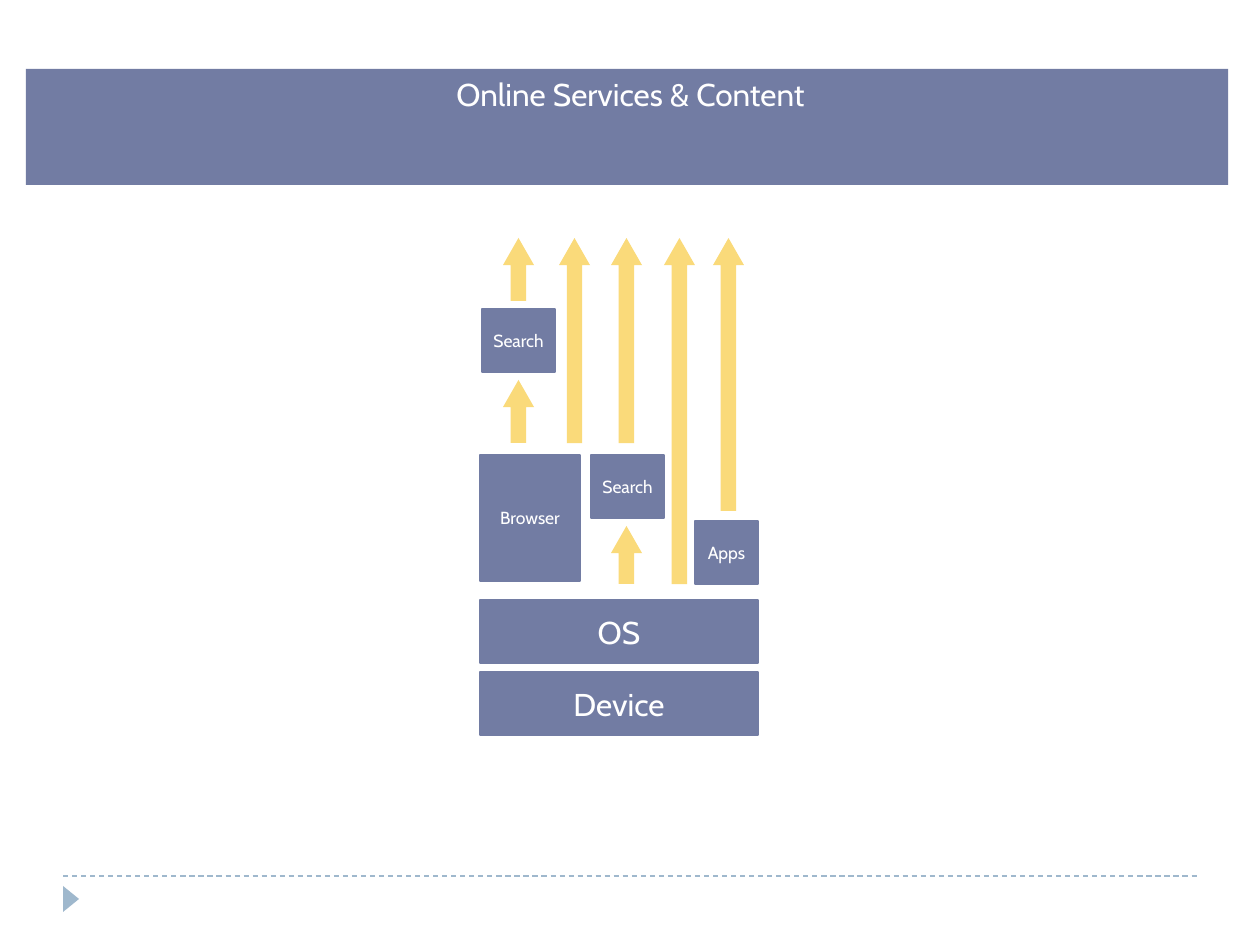
from pptx import Presentation
from pptx.dml.color import RGBColor
from pptx.enum.dml import MSO_LINE
from pptx.enum.shapes import MSO_CONNECTOR, MSO_SHAPE as Kind
from pptx.enum.text import MSO_ANCHOR, MSO_AUTO_SIZE, PP_ALIGN
from pptx.oxml.ns import qn
from pptx.util import Pt
from lxml.etree import SubElement

PX = 914400 / 126
FONT = "Cabin"
HUES = {"slate": "727CA3", "gold": "FADA7A", "sky": "9FB8CD", "white": "FFFFFF"}

TITLE = "Online Services & Content"
BANNER = (26, 69, 1202, 116)
HEAD = (368, 69, 525, 50)
LAYERS = [("Device", 672), ("OS", 600)]
BOXES = [
    ("Apps", 695, 521, 63, 63),
    ("Search", 591, 455, 73, 63),
    ("Browser", 480, 455, 100, 126),
    ("Search", 482, 309, 73, 63),
]
TOP = 238
ARROWS = [
    (503, TOP, 301),
    (503, 380, 443),
    (559, TOP, 443),
    (611, TOP, 443),
    (611, 526, 584),
    (664, TOP, 584),
    (713, TOP, 511),
]


def emu(*vals):
    return [round(v * PX) for v in vals]


def hue(name):
    return RGBColor.from_string(HUES[name])


def draw(kind, rect, fill, adj):
    shape = slide.shapes.add_shape(kind, *emu(*rect))
    shape.shadow.inherit = False
    shape.fill.solid()
    shape.fill.fore_color.rgb = hue(fill)
    shape.line.fill.background()
    for i, val in enumerate(adj):
        shape.adjustments[i] = val
    return shape


def write(shape, text, size):
    para = shape.text_frame.paragraphs[0]
    para.text = text
    para.alignment = PP_ALIGN.CENTER
    para.font.name = FONT
    para.font.size = Pt(size)
    para.font.color.rgb = hue("white")


def block(text, rect, size):
    shape = draw(Kind.ROUNDED_RECTANGLE, rect, "slate", [0])
    shape.line.color.rgb = hue("slate")
    shape.line.width = Pt(1.5)
    frame = shape.text_frame
    frame.word_wrap = True
    frame.vertical_anchor = MSO_ANCHOR.MIDDLE
    frame.margin_left = frame.margin_right = 0
    frame.margin_top = frame.margin_bottom = 0
    write(shape, text, size)


deck = Presentation()
deck.slide_width, deck.slide_height = emu(1260, 945)
slide = deck.slides.add_slide(deck.slide_layouts[6])

rule = slide.shapes.add_connector(MSO_CONNECTOR.STRAIGHT, *emu(63, 876, 1197, 876))
rule.line.color.rgb = hue("sky")
rule.line.width = Pt(0.75)
rule.line.dash_style = MSO_LINE.DASH
SubElement(rule._element.spPr, qn("a:effectLst"))

mark = draw(Kind.ISOSCELES_TRIANGLE, (58, 891, 26, 16), "sky", [0.5])
mark.rotation = 90

draw(Kind.ROUNDED_RECTANGLE, BANNER, "slate", [0])
head = slide.shapes.add_textbox(*emu(*HEAD))
head.text_frame.word_wrap = True
head.text_frame.auto_size = MSO_AUTO_SIZE.SHAPE_TO_FIT_TEXT
write(head, TITLE, 18)

for text, y in LAYERS:
    block(text, (480, y, 278, 63), 18)
for text, *rect in BOXES:
    block(text, rect, 10)
for x, top, end in ARROWS:
    draw(Kind.UP_ARROW, (x, top, 31, end - top), "gold", [0.5, 0.875])

deck.save("out.pptx")
